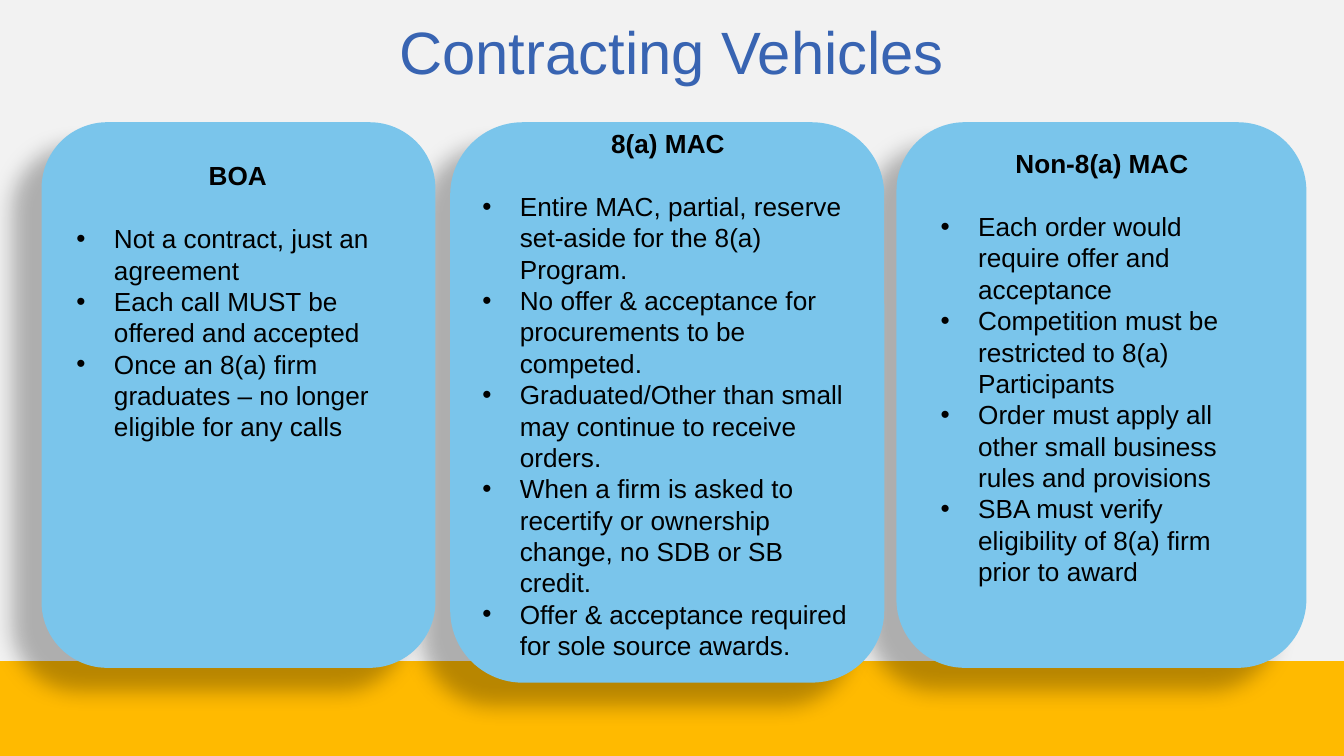
import pptx
import pptx.dml.color
import pptx.enum.shapes
import pptx.enum.text
import pptx.oxml
import pptx.oxml.ns
import pptx.util

Inches = pptx.util.Inches
Pt = pptx.util.Pt
Shapes = pptx.enum.shapes.MSO_SHAPE
Align = pptx.enum.text.PP_ALIGN
Anchor = pptx.enum.text.MSO_ANCHOR

SLIDE_WIDTH = 10
SLIDE_HEIGHT = SLIDE_WIDTH * 9 / 16
BAND_TOP = 4.92
PANEL_TOP = 0.91
# Right to left, so that each shadow falls behind the neighbouring panel.
# Panel left, width, height; text left, top, width, height; heading; points
PANELS = [
    ((6.67, 3.05, 4.06), (6.87, 1.05, 2.66, 3.4), "Non-8(a) MAC", [
        "Each order would require offer and acceptance",
        "Competition must be restricted to 8(a) Participants",
        "Order must apply all other small business rules and provisions",
        "SBA must verify eligibility of 8(a) firm prior to award",
    ]),
    ((3.35, 3.23, 4.17), (3.46, 0.9, 3.02, 4.11), "8(a) MAC", [
        "Entire MAC, partial, reserve set-aside for the 8(a) Program.",
        "No offer & acceptance for procurements to be competed.",
        "Graduated/Other than small may continue to receive orders.",
        "When a firm is asked to recertify or ownership change, no SDB or SB credit.",
        "Offer & acceptance required for sole source awards.",
    ]),
    ((0.31, 2.93, 4.06), (0.44, 1.14, 2.66, 2.22), "BOA", [
        "Not a contract, just an agreement",
        "Each call MUST be offered and accepted",
        "Once an 8(a) firm graduates – no longer eligible for any calls",
    ]),
]


def rgb(value):
    return pptx.dml.color.RGBColor.from_string(value)


def xml(markup):
    """Parse one DrawingML element whose root tag is followed by a space."""
    head, rest = markup.split(" ", 1)
    return pptx.oxml.parse_xml(f"{head} {pptx.oxml.ns.nsdecls('a')} {rest}")


def write(para, text, size=14, color="000000", bold=False, align=None,
          spacing=1.0, after=0, bullet=False):
    if bullet:
        properties = para._p.get_or_add_pPr()
        properties.set("marL", str(Inches(0.31)))
        properties.set("indent", str(Inches(-0.28)))
        properties.append(xml('<a:buFont typeface="Arial"/>'))
        properties.append(xml('<a:buChar char="•"/>'))
    para.alignment = align
    para.line_spacing = spacing
    para.space_before = Pt(0)
    para.space_after = Pt(after)
    span = para.add_run()
    span.text = text
    span.font.name = "Arial"
    span.font.size = Pt(size)
    span.font.bold = bold
    span.font.color.rgb = rgb(color)


class Page:
    blue, panel_fill, gold, grey = "3864B2", "7AC5EB", "FFBA00", "F2F2F2"

    def __init__(self, deck):
        self.slide = deck.slides.add_slide(deck.slide_layouts[5])

    def shape(self, kind, left, top, width, height, fill):
        shape = self.slide.shapes.add_shape(
            kind, Inches(left), Inches(top), Inches(width), Inches(height))
        shape.shadow.inherit = False
        shape.fill.solid()
        shape.fill.fore_color.rgb = rgb(fill)
        shape.line.fill.background()
        return shape

    def band(self, top, height, fill):
        band = self.shape(Shapes.RECTANGLE, 0, top, SLIDE_WIDTH, height, fill)
        tree = self.slide.shapes._spTree
        tree.remove(band._element)
        tree.insert(2, band._element)  # behind the title

    def title(self, text):
        title = self.slide.shapes.title
        title.left, title.top = Inches(0.69), Inches(0.12)
        title.width, title.height = Inches(8.62), Inches(0.73)
        title.text_frame.vertical_anchor = Anchor.TOP
        write(title.text_frame.paragraphs[0], text, size=32, color=self.blue,
              align=Align.CENTER, spacing=0.9)

    def panel(self, left, width, height):
        panel = self.shape(Shapes.ROUNDED_RECTANGLE, left, PANEL_TOP,
                           width, height, self.panel_fill)
        panel.adjustments[0] = 0.167
        effects = panel._element.spPr.find(pptx.oxml.ns.qn("a:effectLst"))
        effects.append(xml(
            f'<a:outerShdw blurRad="{Pt(11.8)}" dist="{Pt(19.7)}" '
            f'dir="{141 * 60000}" algn="ctr" rotWithShape="0">'
            '<a:srgbClr val="000000"><a:alpha val="28000"/></a:srgbClr>'
            '</a:outerShdw>'))

    def points(self, left, top, width, height, heading, items):
        box = self.slide.shapes.add_textbox(
            Inches(left), Inches(top), Inches(width), Inches(height))
        frame = box.text_frame
        frame.word_wrap = True
        frame.auto_size = pptx.enum.text.MSO_AUTO_SIZE.SHAPE_TO_FIT_TEXT
        write(frame.paragraphs[0], heading, bold=True, align=Align.CENTER,
              after=16.8)
        for item in items:
            write(frame.add_paragraph(), item, bullet=True)


def main():
    deck = pptx.Presentation()
    deck.slide_width = Inches(SLIDE_WIDTH)
    deck.slide_height = Inches(SLIDE_HEIGHT)
    page = Page(deck)
    page.band(BAND_TOP, SLIDE_HEIGHT - BAND_TOP, Page.gold)
    page.band(0, BAND_TOP, Page.grey)
    page.title("Contracting Vehicles")
    for panel, text_area, heading, items in PANELS:
        page.panel(*panel)
        page.points(*text_area, heading, items)
    deck.save("out.pptx")


if __name__ == "__main__":
    main()
